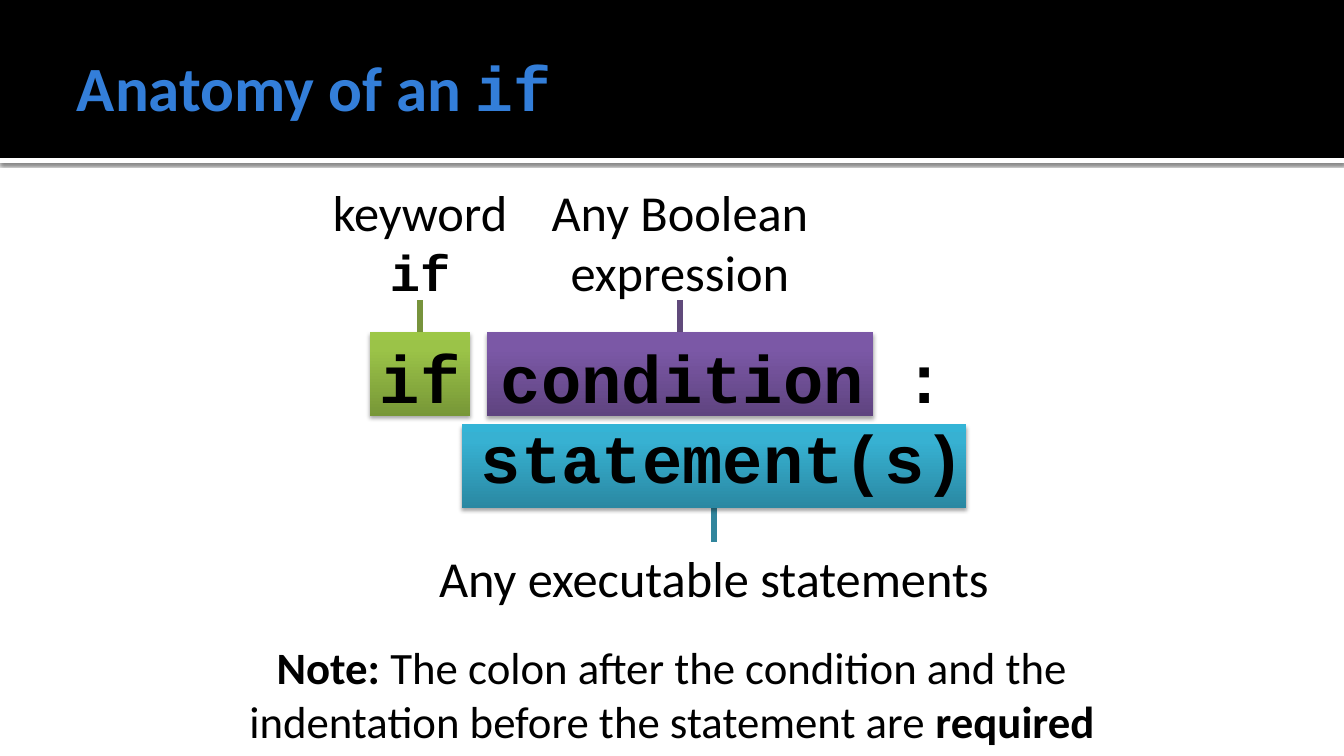
"""Build the slide that explains the parts of an if statement."""
from dataclasses import dataclass

from lxml import etree
from pptx import Presentation
from pptx.dml.color import RGBColor
from pptx.enum.shapes import MSO_CONNECTOR, MSO_SHAPE
from pptx.enum.text import MSO_ANCHOR, PP_ALIGN
from pptx.oxml import parse_xml
from pptx.oxml.ns import nsdecls, qn
from pptx.util import Emu, Pt

LEFT, CENTER = PP_ALIGN.LEFT, PP_ALIGN.CENTER
TOP, MIDDLE = MSO_ANCHOR.TOP, MSO_ANCHOR.MIDDLE
RECTANGLE, STRAIGHT = MSO_SHAPE.RECTANGLE, MSO_CONNECTOR.STRAIGHT


@dataclass(frozen=True)
class Theme:
    """Colours, fonts and type sizes."""
    body: str = "Calibri"
    code: str = "Courier New"
    black: str = "000000"
    white: str = "FFFFFF"
    title: str = "337ED9"
    title_size: int = 45
    code_size: int = 48
    label_size: int = 36
    note_size: int = 32
    green: tuple = ("77933C", "779737", "9BC348", "9DC746")
    purple: tuple = ("604A7B", "5F4480", "7B58A6", "7C57A8")
    blue: tuple = ("31859C", "2A88A2", "37B1D2", "34B4D6")


THEME = Theme()
WIDTH, HEIGHT = 1344, 756
SCALE = 914400 / 100.8
BANNER_HEIGHT, RULE_HEIGHT = 158, 5
BOX_HEIGHT, STEM, INDENT = 84, 32, 101
STOPS = (0, 80, 100)

TITLE = [[("Anatomy of an ", "bold"), ("if", "bold code")]]
CODE = [[("if condition :", "bold code")], [("statement(s)", "bold code")]]
NOTE = [[
    ("Note: ", "bold"),
    ("The colon after the condition and the indentation before the statement are ", ""),
    ("required", "bold"),
]]
PARTS = [
    {"label": [[("keyword", "")], [("if", "bold code")]], "box": (370, 332, 100),
     "colors": THEME.green, "label_width": 286, "label_height": 132, "above": True},
    {"label": [[("Any Boolean expression", "")]], "box": (487, 332, 386),
     "colors": THEME.purple, "label_width": 404, "label_height": 132, "above": True},
    {"label": [[("Any executable statements", "")]], "box": (462, 424, 504),
     "colors": THEME.blue, "label_width": 688, "label_height": 72, "above": False},
]


def px(*lengths):
    """Turn pixels into EMU."""
    return [Emu(round(length * SCALE)) for length in lengths]


def add_text(slide, text, *, at, size, color=THEME.black, align=CENTER,
             anchor=TOP, margins=(10, 5, 10, 5), indents=()):
    """Add a wrapped text box from paragraphs of styled runs."""
    frame = slide.shapes.add_textbox(*px(*at)).text_frame
    frame.word_wrap = True
    frame.vertical_anchor = anchor
    (frame.margin_left, frame.margin_top,
     frame.margin_right, frame.margin_bottom) = px(*margins)
    for index, runs in enumerate(text):
        paragraph = frame.add_paragraph() if index else frame.paragraphs[0]
        paragraph.alignment = align
        if index < len(indents):
            properties = paragraph._p.get_or_add_pPr()
            properties.set("marL", str(px(indents[index])[0]))
            properties.set("indent", "0")
        for words, style in runs:
            run = paragraph.add_run()
            run.text = words
            run.font.size = Pt(size)
            run.font.bold = "bold" in style
            run.font.name = THEME.code if "code" in style else THEME.body
            run.font.color.rgb = RGBColor.from_string(color)


def add_box(slide, at, colors, shadow=None):
    """Add a rectangle with a solid or gradient fill and an optional shadow."""
    shape = slide.shapes.add_shape(RECTANGLE, *px(*at))
    shape.line.fill.background()
    shape.shadow.inherit = False
    properties = shape._element.spPr
    if len(colors) == 1:
        shape.fill.solid()
        shape.fill.fore_color.rgb = RGBColor.from_string(colors[0])
    else:
        shape.fill.gradient()
        shape.fill.gradient_angle = 90
        stops = properties.find(qn("a:gradFill")).find(qn("a:gsLst"))
        for stop in list(stops):
            stops.remove(stop)
        for position, color in zip(STOPS, colors):
            stop = etree.SubElement(stops, qn("a:gs"), pos=str(position * 1000))
            etree.SubElement(stop, qn("a:srgbClr"), val=color)
    if shadow:
        alpha, blur, distance = shadow
        properties.find(qn("a:effectLst")).append(parse_xml(
            f'<a:outerShdw {nsdecls("a")} blurRad="{Pt(blur)}" dist="{Pt(distance)}" '
            f'dir="5400000" rotWithShape="0"><a:srgbClr val="{THEME.black}">'
            f'<a:alpha val="{alpha * 1000}"/></a:srgbClr></a:outerShdw>'))


def add_part(slide, part):
    """Add a coloured box with its stem and label centred on it."""
    left, top, width = part["box"]
    center = left + width // 2
    line_color, *gradient = part["colors"]
    if part["above"]:
        start, end = top, top - STEM
        label_top = end - part["label_height"] + 8
    else:
        start = top + BOX_HEIGHT
        end = label_top = start + STEM + 2
    stem = slide.shapes.add_connector(STRAIGHT, *px(center, start, center, end))
    stem.line.color.rgb = RGBColor.from_string(line_color)
    stem.line.width = Pt(4)
    etree.SubElement(stem._element.spPr, qn("a:effectLst"))
    add_box(slide, (left, top, width, BOX_HEIGHT), gradient, shadow=(35, 3.1, 1.8))
    label_left = center - part["label_width"] // 2
    add_text(slide, part["label"], size=THEME.label_size,
             at=(label_left, label_top, part["label_width"], part["label_height"]))


def main():
    """Compose and save the slide."""
    presentation = Presentation()
    presentation.slide_width, presentation.slide_height = px(WIDTH, HEIGHT)
    slide = presentation.slides.add_slide(presentation.slide_layouts[6])
    add_box(slide, (0, BANNER_HEIGHT, WIDTH, RULE_HEIGHT), [THEME.white],
            shadow=(60, 2.5, 0.8))
    add_box(slide, (0, 0, WIDTH, BANNER_HEIGHT), [THEME.black])
    for part in PARTS:
        add_part(slide, part)
    add_text(slide, TITLE, at=(67, 17, 1210, 138), size=THEME.title_size,
             color=THEME.title, align=LEFT, anchor=MIDDLE, margins=(10, 5, 5, 5))
    add_text(slide, CODE, at=(370, 331, 688, 173), size=THEME.code_size,
             align=LEFT, indents=(0, INDENT))
    add_text(slide, NOTE, at=(189, 635, 966, 119), size=THEME.note_size)
    presentation.save("out.pptx")


if __name__ == "__main__":
    main()
